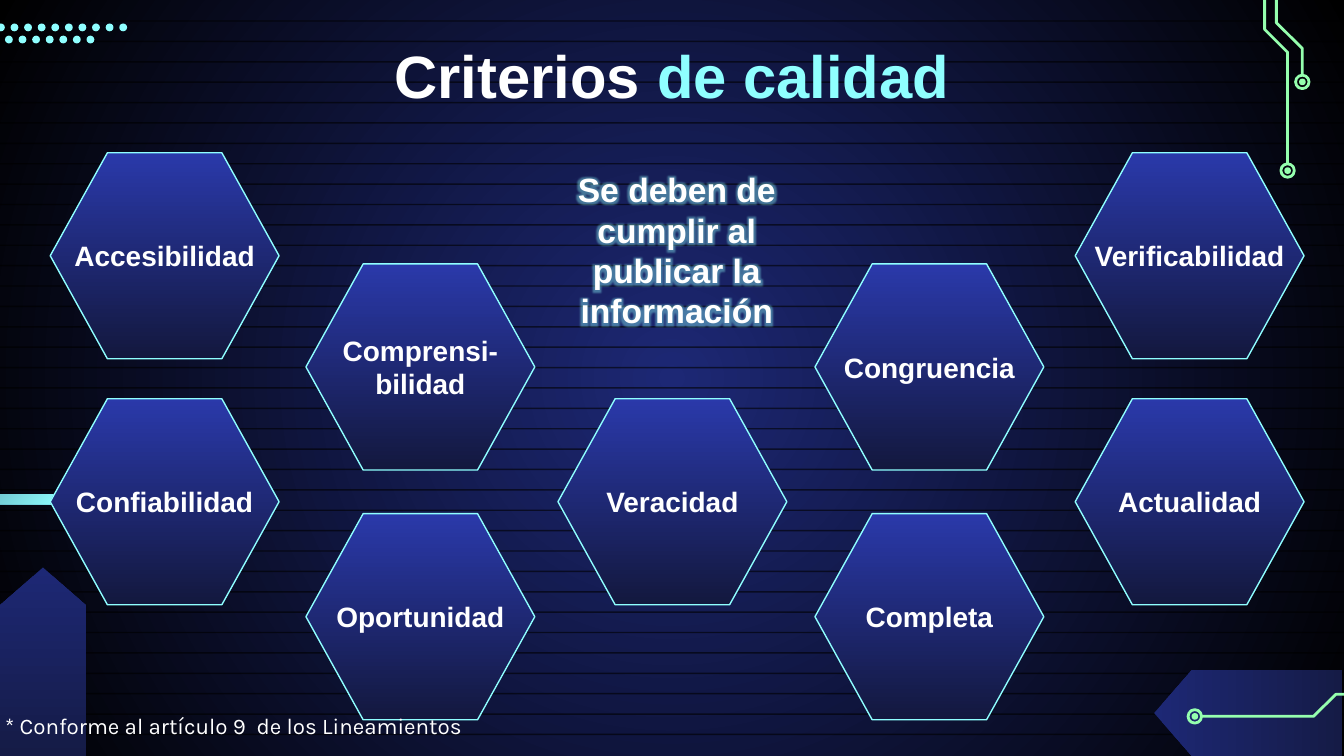
import pptx
import pptx.dml.color
import pptx.enum.shapes
import pptx.enum.text
import pptx.oxml
import pptx.oxml.ns
import pptx.util

Pt = pptx.util.Pt
RGBColor = pptx.dml.color.RGBColor
Shapes = pptx.enum.shapes.MSO_SHAPE
Align = pptx.enum.text.PP_ALIGN
Anchor = pptx.enum.text.MSO_ANCHOR
qn = pptx.oxml.ns.qn

WHITE = RGBColor(0xFF, 0xFF, 0xFF)
BLACK = RGBColor(0x00, 0x00, 0x00)
CYAN = RGBColor(0x8F, 0xFF, 0xFF)
GREEN = RGBColor(0x95, 0xFF, 0xAE)
NAVY = RGBColor(0x1D, 0x28, 0x75)
DEEP_NAVY = RGBColor(0x15, 0x1B, 0x46)
ROYAL = RGBColor(0x2A, 0x39, 0xAA)
MIDNIGHT = RGBColor(0x13, 0x18, 0x3E)

PAGE_WIDTH, PAGE_HEIGHT = 720, 405
NODE_SIZE, CORE_SIZE = 7.2, 3.6
HEXAGON_WIDTH, HEXAGON_HEIGHT = 122.6, 110.4

HEXAGONS = [
    ("Actualidad", 576, 213.6),
    ("Completa", 436.6, 275.2),
    ("Confiabilidad", 26.9, 213.6),
    ("Oportunidad", 163.9, 275.2),
    ("Veracidad", 298.9, 213.6),
    ("Verificabilidad", 576, 81.8),
    ("Congruencia", 436.6, 141.4),
    ("Accesibilidad", 26.9, 81.8),
    ("Comprensi-\nbilidad", 163.9, 141.4),
]


def set_gradient(fill, start, end, angle):
    """Two-colour linear gradient; the angle runs anticlockwise."""
    fill.gradient()
    fill.gradient_angle = angle
    for stop, color, position in zip(fill.gradient_stops, (start, end), (0, 1)):
        stop.color.rgb = color
        stop.position = position


def paint(shape, color=None, line=None, line_width=0.75):
    shape.shadow.inherit = False
    if color is None:
        shape.fill.background()
    else:
        shape.fill.solid()
        shape.fill.fore_color.rgb = color
    if line is None:
        shape.line.fill.background()
    else:
        shape.line.color.rgb = line
        shape.line.width = Pt(line_width)


def add_preset(page, kind, left, top, width, height, **look):
    shape = page.shapes.add_shape(kind, Pt(left), Pt(top), Pt(width), Pt(height))
    paint(shape, **look)
    return shape


def add_outline(page, points, close, **look):
    points = [(Pt(x), Pt(y)) for x, y in points]
    builder = page.shapes.build_freeform(*points[0])
    builder.add_line_segments(points[1:], close=close)
    shape = builder.convert_to_shape()
    paint(shape, **look)
    return shape


def write_text(shape, spans, size, font="Arial", bold=True,
               align=Align.CENTER, anchor=Anchor.MIDDLE):
    """Write (text, colour) spans as one paragraph; a newline is a line break."""
    frame = shape.text_frame
    margins = {"margin_" + side: Pt(7.2) for side in ("left", "top", "right", "bottom")}
    for name, value in {"word_wrap": True, "vertical_anchor": anchor, **margins}.items():
        setattr(frame, name, value)
    para = frame.paragraphs[0]
    para.alignment = align
    for text, color in spans:
        for index, part in enumerate(text.split("\n")):
            if index:
                para.add_line_break()
            span = para.add_run()
            span.text = part
            for name, value in {"size": Pt(size), "name": font, "bold": bold}.items():
                setattr(span.font, name, value)
            span.font.color.rgb = color
    return para


def add_text(page, left, top, width, height, spans, size, **look):
    box = page.shapes.add_textbox(Pt(left), Pt(top), Pt(width), Pt(height))
    return write_text(box, spans, size, **look)


def add_glow(span):
    glow = pptx.oxml.parse_xml(
        f'<a:effectLst {pptx.oxml.ns.nsdecls("a")}><a:glow rad="{Pt(8)}">'
        f'<a:srgbClr val="{CYAN}"><a:alpha val="40000"/></a:srgbClr>'
        '</a:glow></a:effectLst>')
    span.font.fill  # the effect list follows the colour fill
    span.font._element.find(qn("a:solidFill")).addnext(glow)


def paint_background(page):
    """Radial gradient from the centre of the page."""
    set_gradient(page.background.fill, NAVY, BLACK, 0)
    linear = page.element.find(".//" + qn("a:lin"))
    radial = pptx.oxml.parse_xml(
        f'<a:path {pptx.oxml.ns.nsdecls("a")} path="circle">'
        '<a:fillToRect l="50000" t="50000" r="50000" b="50000"/></a:path>')
    linear.getparent().replace(linear, radial)


def draw_scan_lines(page, left, top, width, count=36, step=10.92):
    for row in range(count):
        stripe = add_preset(page, Shapes.RECTANGLE, left, top + row * step,
                            width, 0.8, color=BLACK)
        color = stripe.fill._xPr.find(".//" + qn("a:srgbClr"))
        pptx.oxml.ns  # namespace helpers
        color.append(pptx.oxml.parse_xml(
            f'<a:alpha {pptx.oxml.ns.nsdecls("a")} val="59000"/>'))


def draw_trace(page, left, top, points, node):
    """Circuit trace and its ringed node, relative to the given corner."""
    add_outline(page, [(left + x, top + y) for x, y in points], False,
                line=GREEN, line_width=1.5)
    looks = ((NODE_SIZE, {"line": GREEN, "line_width": 1.5}),
             (CORE_SIZE, {"color": GREEN}))
    for size, look in looks:
        add_preset(page, Shapes.OVAL, left + node[0] - size / 2,
                   top + node[1] - size / 2, size, size, **look)


def draw_dots(page, left, top, step=7.28, size=4.2):
    for offset, drop, count in ((4.3, 6.5, 7), (0, 0, 10)):
        for column in range(count):
            add_preset(page, Shapes.OVAL, left + offset + column * step,
                       top + drop, size, size, color=CYAN)


def draw_tab(page, left, top, width, height, rotation):
    tab = add_preset(page, Shapes.FLOWCHART_OFFPAGE_CONNECTOR, left, top, width, height)
    tab.rotation = rotation
    set_gradient(tab.fill, NAVY, DEEP_NAVY, 90)


def draw_bar(page, left, top, width, height):
    bar = add_preset(page, Shapes.ROUNDED_RECTANGLE, left, top, width, height)
    bar.adjustments[0] = 0.5
    set_gradient(bar.fill, DEEP_NAVY, CYAN, 315)


def draw_hexagon(page, label, left, top, width, height):
    right, bottom, middle = left + width, top + height, top + height / 2
    inset = width / 4
    points = [(left + inset, top), (left, middle), (left + inset, bottom),
              (right - inset, bottom), (right, middle), (right - inset, top)]
    hexagon = add_outline(page, points, True, line=CYAN)
    set_gradient(hexagon.fill, ROYAL, MIDNIGHT, 270)
    write_text(hexagon, [(label, WHITE)], 15)


def draw_decoration(page):
    draw_scan_lines(page, 0, 10.92, PAGE_WIDTH)
    draw_trace(page, 677.5, -49, [(0, 0), (0, 64.8), (12.3, 77.1), (12.3, 136.8)],
               (12.3, 140.4))
    draw_trace(page, 683.8, -49, [(0, 0), (0, 61.2), (13.9, 75), (13.9, 89.3)],
               (13.9, 92.9))
    draw_tab(page, 645.8, 331.5, 46, 101, 90)
    draw_trace(page, 640.1, 372, [(140.4, 0), (75.6, 0), (63.6, 11.8), (3.6, 11.8)],
               (0, 11.8))
    draw_dots(page, -1.6, 12.6)
    draw_bar(page, -123.8, 264.7, 157, 5.4)
    draw_tab(page, 0, 304, 46, 101, 180)


def build_quality_criteria(page):
    paint_background(page)
    draw_decoration(page)
    for label, left, top in HEXAGONS:
        draw_hexagon(page, label, left, top, HEXAGON_WIDTH, HEXAGON_HEIGHT)
    add_text(page, 180.7, 17.3, 358.6, 45.4,
             [("Criterios ", WHITE), ("de calidad", CYAN)], 32)
    statement = add_text(page, 297.4, 75.6, 130.3, 116.6,
                         [("Se deben de cumplir al publicar la información", WHITE)], 18)
    add_glow(statement.runs[0])
    note = add_text(page, -4.3, 374.4, 280, 30.2,
                    [("* Conforme al artículo 9  de los Lineamientos", WHITE)], 12,
                    font="Karla", bold=False, align=Align.LEFT, anchor=Anchor.TOP)
    note.space_after = Pt(12)


def main():
    deck = pptx.Presentation()
    deck.slide_width, deck.slide_height = Pt(PAGE_WIDTH), Pt(PAGE_HEIGHT)
    build_quality_criteria(deck.slides.add_slide(deck.slide_layouts[6]))
    deck.save("out.pptx")


if __name__ == "__main__":
    main()
